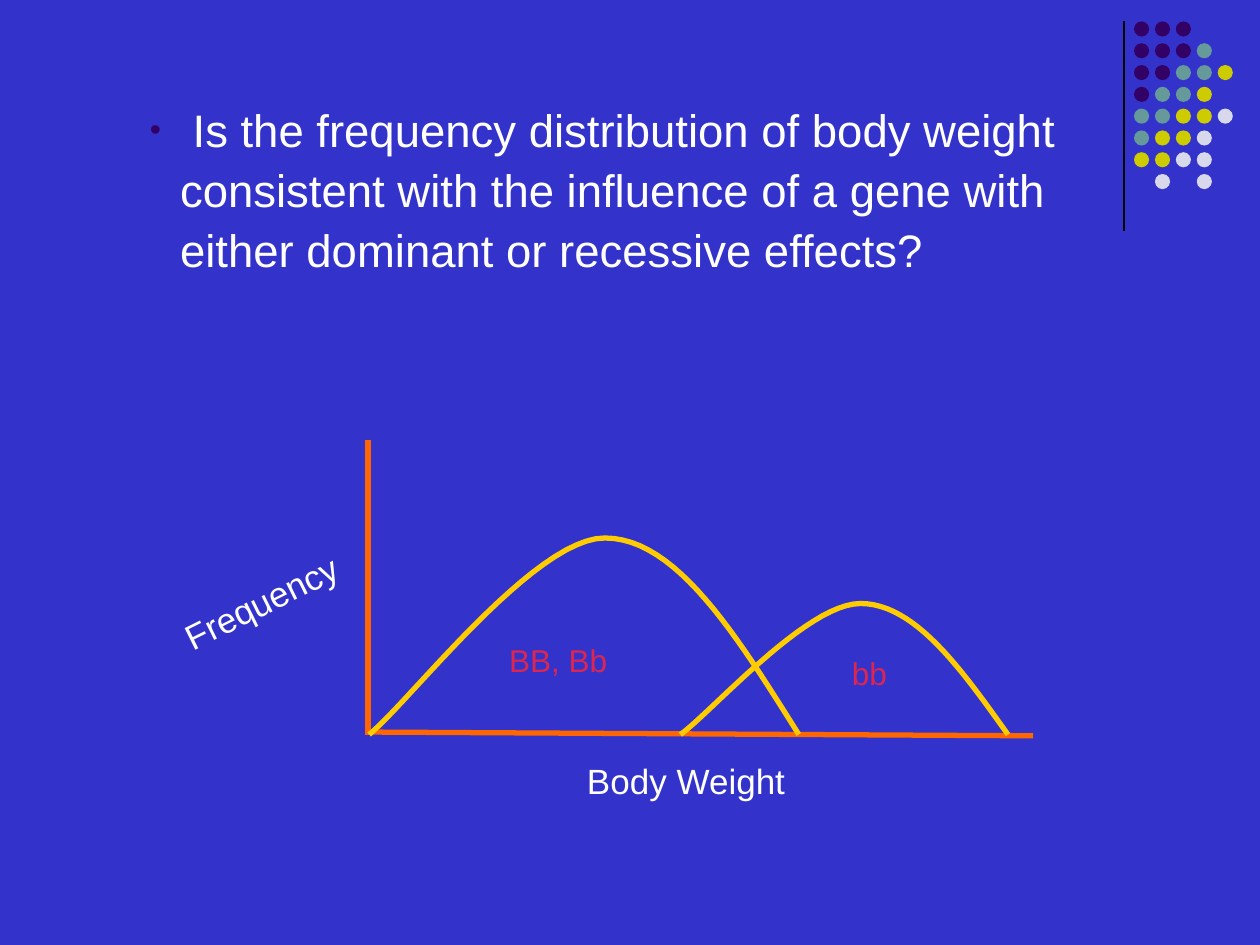
"""Build a slide on body weight distributions under dominant and recessive gene effects."""
from dataclasses import dataclass

from lxml import etree
from pptx import Presentation
from pptx.dml.color import RGBColor
from pptx.enum.shapes import MSO_CONNECTOR, MSO_SHAPE
from pptx.enum.text import MSO_AUTO_SIZE, PP_ALIGN
from pptx.oxml.ns import qn
from pptx.util import Inches, Pt

STRAIGHT = MSO_CONNECTOR.STRAIGHT
OVAL = MSO_SHAPE.OVAL
GROW = MSO_AUTO_SIZE.SHAPE_TO_FIT_TEXT
LEFT, CENTER = PP_ALIGN.LEFT, PP_ALIGN.CENTER

COLUMNS, ROWS = 100, 75
CELL = Inches(0.1)
CURVE_STEPS = 24
BASELINE = 58.3

DOT_LEFT, DOT_TOP, DOT_SIZE = 90, 1.7, 1.2
DOT_COLUMN, DOT_ROW = 1.66, 1.73
DOT_PATTERN = ("PPP", "PPPT", "PPTTY", "PTTY", "TTYYL", "TYYL", "YYLL", " L L")


@dataclass(frozen=True)
class Theme:
    """Colours, font, type sizes and line widths of the slide."""

    background: str = "3333CC"
    text: str = "FFFFFF"
    accent: str = "DA2651"
    axis: str = "FF6600"
    curve: str = "FFCC00"
    rule: str = "000000"
    purple: str = "330066"
    teal: str = "669999"
    yellow: str = "CCCC00"
    pale: str = "D8D8EC"
    font: str = "Arial"
    question_size: int = 26
    axis_size: int = 20
    genotype_size: int = 18
    thin: float = 0.75
    thick: float = 3


THEME = Theme()


def grid(*cells):
    """Convert counts of grid cells to slide lengths."""
    return [round(cell * CELL) for cell in cells]


def color(code):
    """Return the colour for a hex code."""
    return RGBColor.from_string(code)


def set_line(shape, code, width):
    """Set the line colour and width of a shape or connector."""
    shape.line.color.rgb = color(code)
    shape.line.width = Pt(width)


def add_line(page, start, end, code, width):
    """Add a straight line without a shadow."""
    line = page.shapes.add_connector(STRAIGHT, *grid(*start, *end))
    set_line(line, code, width)
    etree.SubElement(line._element.spPr, qn("a:effectLst"))


def add_dots(page):
    """Add the grid of coloured dots in the corner."""
    colors = {"P": THEME.purple, "T": THEME.teal, "Y": THEME.yellow, "L": THEME.pale}
    for row, pattern in enumerate(DOT_PATTERN):
        for column, key in enumerate(pattern):
            if key in colors:
                left, top = DOT_LEFT + column * DOT_COLUMN, DOT_TOP + row * DOT_ROW
                dot = page.shapes.add_shape(OVAL, *grid(left, top, DOT_SIZE, DOT_SIZE))
                dot.shadow.inherit = False
                dot.fill.solid()
                dot.fill.fore_color.rgb = color(colors[key])
                dot.line.fill.background()


def bezier(controls):
    """Return points along a cubic curve with four control points."""
    points = []
    for step in range(CURVE_STEPS + 1):
        t = step / CURVE_STEPS
        weights = ((1 - t) ** 3, 3 * t * (1 - t) ** 2, 3 * t * t * (1 - t), t ** 3)
        points.append([sum(w * p[axis] for w, p in zip(weights, controls)) for axis in (0, 1)])
    return points


def add_curve(page, right_half, left_half):
    """Add a hump-shaped open curve made of two cubic halves."""
    points = [grid(*point) for point in bezier(right_half) + bezier(left_half)[1:]]
    builder = page.shapes.build_freeform(*points[0])
    builder.add_line_segments(points[1:], close=False)
    curve = builder.convert_to_shape()
    curve.shadow.inherit = False
    curve.fill.background()
    set_line(curve, THEME.curve, THEME.thick)


def add_text(page, place, spans, size, align=CENTER, wrap=False, rotation=0):
    """Add a text box of (text, colour) spans and return its paragraph."""
    box = page.shapes.add_textbox(*grid(*place))
    box.rotation = rotation
    frame = box.text_frame
    frame.word_wrap = wrap
    frame.auto_size = GROW
    para = frame.paragraphs[0]
    para.alignment = align
    for text, code in spans:
        span = para.add_run()
        span.text = text
        span.font.name = THEME.font
        span.font.size = Pt(size)
        span.font.color.rgb = color(code)
    return para


def add_bullet(para, code, percent, indent):
    """Give a paragraph a coloured bullet and a hanging indent."""
    props = para._p.get_or_add_pPr()
    props.set("marL", str(indent))
    props.set("indent", str(-indent))
    bullet_color = etree.SubElement(props, qn("a:buClr"))
    etree.SubElement(bullet_color, qn("a:srgbClr"), val=code)
    etree.SubElement(props, qn("a:buSzPct"), val=str(percent * 1000))
    etree.SubElement(props, qn("a:buFont"), typeface=THEME.font)
    etree.SubElement(props, qn("a:buChar"), char="•")


def add_question(page):
    """Add the bulleted question."""
    question = ("Is the frequency distribution of body weight consistent with the "
                "influence of a gene with either dominant or recessive effects?")
    spans = [(" ", THEME.accent), (question, THEME.text)]
    para = add_text(page, (10.9, 7.2, 77.1, 14.8), spans, THEME.question_size, LEFT, wrap=True)
    para.line_spacing = 1.1
    add_bullet(para, THEME.purple, 70, Inches(0.24))


def add_plot(page):
    """Add the axes, both distribution curves and their labels."""
    add_line(page, (29.2, 34.9), (29.2, BASELINE), THEME.axis, THEME.thick)
    add_line(page, (29.2, 58.1), (82, 58.4), THEME.axis, THEME.thick)
    add_curve(page,
              [(63.4, BASELINE), (58.5, 50.5), (53.7, 42.7), (48, 42.7)],
              [(48, 42.7), (42.4, 42.7), (32.5, 55.7), (29.3, BASELINE)])
    add_curve(page,
              [(80, BASELINE), (76.3, 53.1), (72.6, 47.9), (68.3, 47.9)],
              [(68.3, 47.9), (64, 47.9), (56.4, 56.6), (54, BASELINE)])
    add_text(page, (11.7, 45.6, 18, 4.3), [("Frequency", THEME.text)], THEME.axis_size,
             wrap=True, rotation=333.5)
    add_text(page, (45.5, 59.8, 17.9, 4.4), [("Body Weight", THEME.text)], THEME.axis_size)
    for place, label in (((39.4, 50.4, 9.8, 4), "BB, Bb"), ((66.6, 51.4, 4.8, 4), "bb")):
        add_text(page, place, [(label, THEME.accent)], THEME.genotype_size)


def main():
    """Build and save the deck."""
    deck = Presentation()
    deck.slide_width, deck.slide_height = grid(COLUMNS, ROWS)
    page = deck.slides.add_slide(deck.slide_layouts[6])
    page.background.fill.solid()
    page.background.fill.fore_color.rgb = color(THEME.background)
    add_line(page, (89.2, 1.7), (89.2, 18.3), THEME.rule, THEME.thin)
    add_dots(page)
    add_question(page)
    add_plot(page)
    deck.save("out.pptx")


if __name__ == "__main__":
    main()
